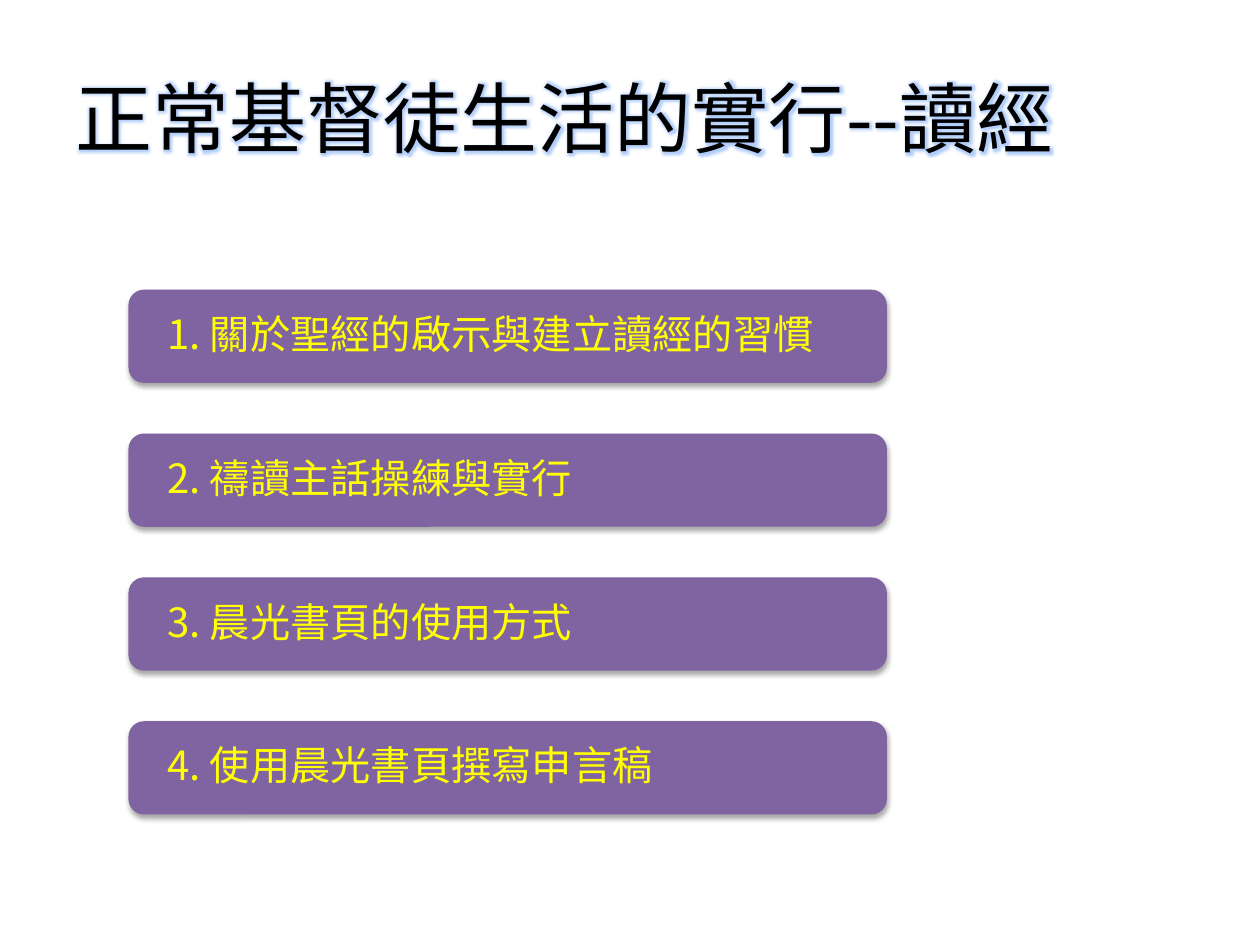
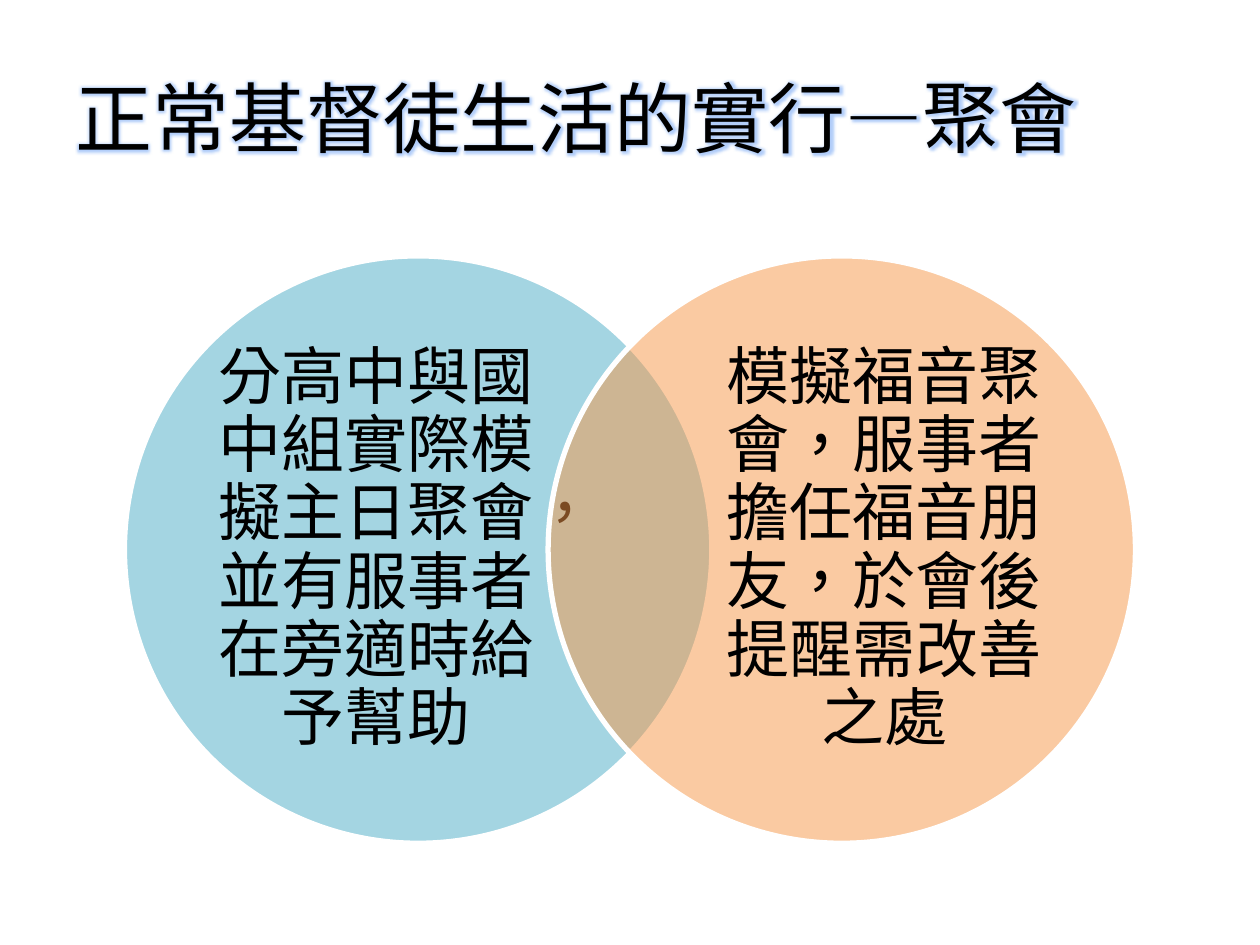
"""Build two slides on Bible reading and meetings: a list of bars and a pair of overlapping circles."""
from dataclasses import dataclass

import pptx
import pptx.dml.color
import pptx.enum.lang
import pptx.enum.shapes
import pptx.enum.text
import pptx.oxml
import pptx.oxml.ns
import pptx.util
from pptx.util import Cm, Pt

READING_TITLE = "正常基督徒生活的實行--讀經"
READING_TOPICS = [
    "1. 關於聖經的啟示與建立讀經的習慣",
    "2. 禱讀主話操練與實行",
    "3. 晨光書頁的使用方式",
    "4. 使用晨光書頁撰寫申言稿",
]
MEETING_TITLE = "正常基督徒生活的實行—聚會"
MEETINGS = [
    ("分高中與國中組實際模擬主日聚會，並有服事者在旁適時給予幫助", "4BACC6"),
    ("模擬福音聚會，服事者擔任福音朋友，於會後提醒需改善之處", "F79646"),
]


@dataclass(frozen=True)
class Theme:
    font: str = "Noto Sans CJK JP"
    title_size: int = 44
    bar_size: int = 23
    circle_size: int = 36
    text: str = "000000"
    bar: str = "8064A2"
    bar_text: str = "FFFF00"
    outline: str = "FFFFFF"
    glow: str = "3C82F0"


THEME = Theme()
SHAPE = pptx.enum.shapes.MSO_SHAPE
ALIGN = pptx.enum.text.PP_ALIGN
GLOW = ("glow", f'rad="{Pt(5)}"', THEME.glow, 40)
SHADOW = ("outerShdw", f'blurRad="{Pt(3.1)}" dist="{Pt(1.8)}" dir="5400000" rotWithShape="0"', "000000", 35)


def rgb(value):
    return pptx.dml.color.RGBColor.from_string(value)


def add_effect(parent, effect):
    name, attributes, color, opacity = effect
    parent.append(pptx.oxml.parse_xml(
        f'<a:effectLst {pptx.oxml.ns.nsdecls("a")}><a:{name} {attributes}>'
        f'<a:srgbClr val="{color}"><a:alpha val="{opacity * 1000}"/></a:srgbClr>'
        f'</a:{name}></a:effectLst>'))


def write(sp, text, size, color, align=ALIGN.LEFT, spacing=None, inset=None, effect=None):
    tf = sp.text_frame
    tf.word_wrap = True
    tf.vertical_anchor = pptx.enum.text.MSO_ANCHOR.MIDDLE
    if inset is not None:
        tf.margin_left = tf.margin_right = inset
        tf.margin_top = tf.margin_bottom = 0
    p = tf.paragraphs[0]
    p.alignment, p.line_spacing = align, spacing
    p.font.name, p.font.size = THEME.font, Pt(size)
    p.font.color.rgb = rgb(color)
    r = p.add_run()
    r.text = text
    r.font.language_id = pptx.enum.lang.MSO_LANGUAGE_ID.TRADITIONAL_CHINESE
    props = r._r.get_or_add_rPr()
    if effect:
        add_effect(props, effect)
    props.append(pptx.oxml.parse_xml(
        f'<a:ea {pptx.oxml.ns.nsdecls("a")} typeface="{THEME.font}"/>'))


def add_filled(slide, kind, box, color):
    sp = slide.shapes.add_shape(kind, *box)
    sp.fill.solid()
    sp.fill.fore_color.rgb = rgb(color)
    return sp


def add_titled_slide(prs, title):
    slide = prs.slides.add_slide(prs.slide_layouts[5])
    sp = slide.shapes.title
    sp.left, sp.top, sp.width, sp.height = Cm(1.27), Cm(0.76), Cm(22.86), Cm(3.18)
    write(sp, title, THEME.title_size, THEME.text, effect=GLOW)
    return slide


def add_bars(slide, topics):
    left, top, width, height, pitch = Cm(2.59), Cm(5.84), Cm(15.29), Cm(1.88), Cm(2.9)
    for i, topic in enumerate(topics):
        sp = add_filled(slide, SHAPE.ROUNDED_RECTANGLE, (left, top + i * pitch, width, height), THEME.bar)
        sp.line.fill.background()
        add_effect(sp._element.spPr, SHADOW)
        write(sp, topic, THEME.bar_size, THEME.bar_text, spacing=0.9, inset=Cm(0.69))


def add_circles(slide, meetings, slide_width):
    size, top, margin = Cm(11.84), Cm(5.16), Cm(2.51)
    text_width, text_height, text_margin = Cm(6.81), Cm(9.04), Cm(4.17)
    circle_lefts = margin, slide_width - margin - size
    text_lefts = text_margin, slide_width - text_margin - text_width
    text_top = top + (size - text_height) // 2
    for (text, color), left, text_left in zip(meetings, circle_lefts, text_lefts):
        sp = add_filled(slide, SHAPE.OVAL, (left, top, size, size), color)
        sp.line.color.rgb = rgb(THEME.outline)
        sp.line.width = Pt(3)
        sp.shadow.inherit = False
        fill = sp._element.spPr.find(pptx.oxml.ns.qn("a:solidFill"))
        fill[0].append(pptx.oxml.parse_xml(
            f'<a:alpha {pptx.oxml.ns.nsdecls("a")} val="50000"/>'))
        label = slide.shapes.add_textbox(text_left, text_top, text_width, text_height)
        write(label, text, THEME.circle_size, THEME.text, ALIGN.CENTER, 0.9, 0)


def main():
    prs = pptx.Presentation()
    prs.slide_width, prs.slide_height = Cm(25.4), Cm(19.05)
    add_bars(add_titled_slide(prs, READING_TITLE), READING_TOPICS)
    add_circles(add_titled_slide(prs, MEETING_TITLE), MEETINGS, prs.slide_width)
    prs.save("out.pptx")


if __name__ == "__main__":
    main()
